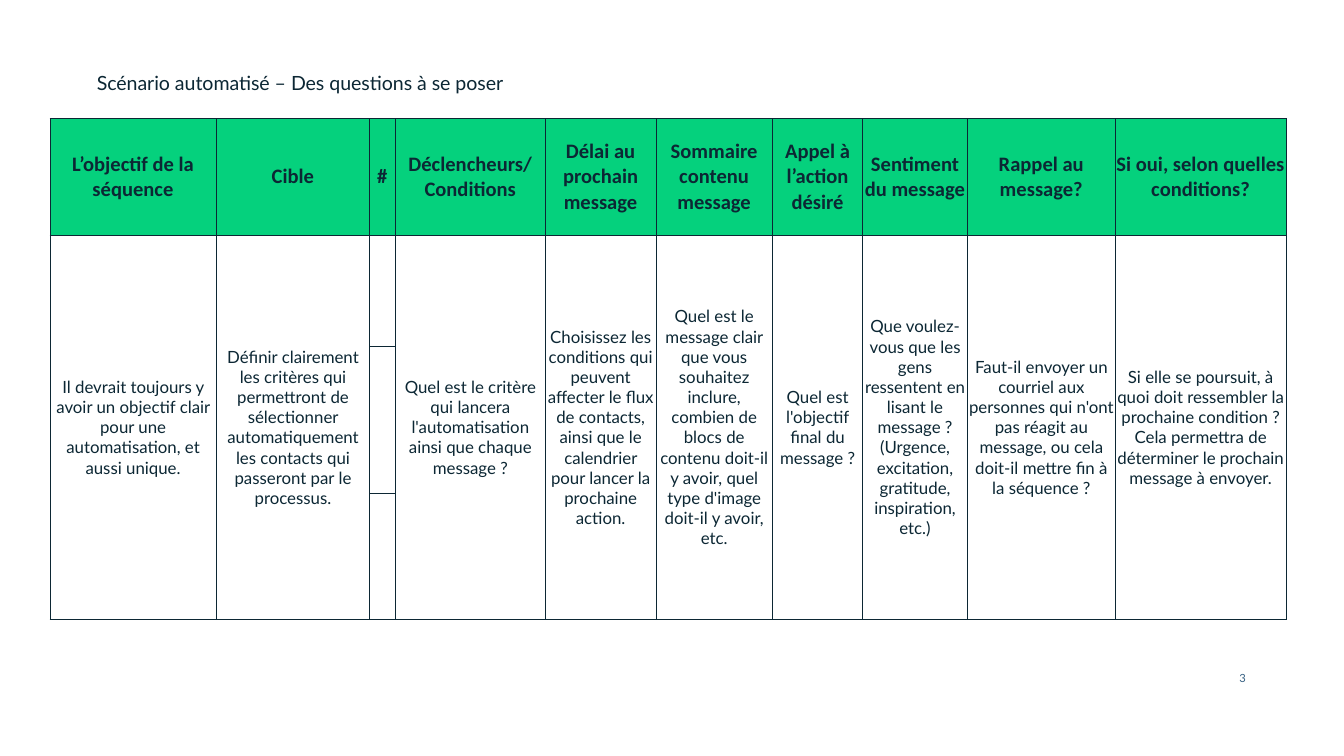
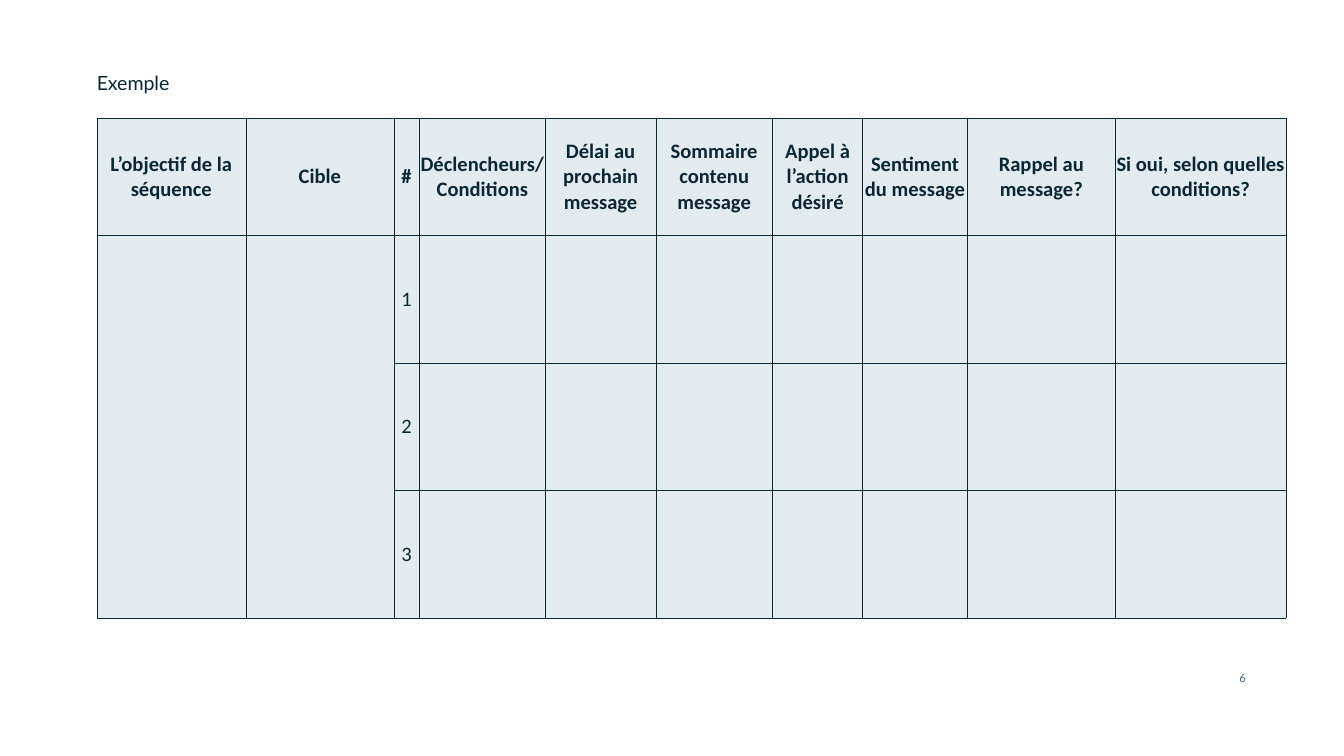
"""Build two slides that plan an automated message scenario in tables."""
from dataclasses import dataclass
from typing import Optional

from lxml.etree import SubElement
from pptx import Presentation
from pptx.dml.color import RGBColor
from pptx.enum.text import MSO_ANCHOR, PP_ALIGN
from pptx.oxml.ns import qn
from pptx.slide import Slide
from pptx.table import _Cell
from pptx.text.text import TextFrame
from pptx.util import Inches, Pt

COLORS = {
    "ink": "0C2734",
    "green": "05D17D",
    "mist": "E4EBEF",
    "number": "376183",
    "paper": "FFFFFF",
}

FORMATS = {
    "title": {"name": "Lato", "size": Pt(10.5), "bold": False},
    "page": {"name": "Lato", "size": Pt(6), "bold": False},
    "header": {"name": "Calibri", "size": Pt(11), "bold": True},
    "answer": {"name": "Lato", "size": Pt(9), "bold": False},
    "step": {"name": "Calibri", "size": Pt(11), "bold": False},
}

NO_MARGINS = {f"margin_{side}": 0 for side in ("left", "top", "right", "bottom")}
BORDER_WIDTH = Pt(0.25)
TABLE_TOP = 0.88
HEADER_HEIGHT = 0.87
SHARED_WIDTHS = (0.82, 0.87, 0.67, 0.78, 1.1, 1.27)

HEADERS = (
    "L’objectif de la séquence",
    "Cible",
    "#",
    "Déclencheurs/\nConditions",
    "Délai au prochain message",
    "Sommaire contenu message",
    "Appel à l’action désiré",
    "Sentiment du message",
    "Rappel au message?",
    "Si oui, selon quelles conditions?",
)
STEP_COLUMN = HEADERS.index("#")

QUESTIONS = (
    "Il devrait toujours y avoir un objectif clair pour une automatisation, et aussi unique.",
    "Définir clairement les critères qui permettront de sélectionner automatiquement "
    "les contacts qui passeront par le processus.",
    "",
    "Quel est le critère qui lancera l'automatisation ainsi que chaque message ?",
    "Choisissez les conditions qui peuvent affecter le flux de contacts, ainsi que le "
    "calendrier pour lancer la prochaine action.",
    "Quel est le message clair que vous souhaitez inclure, combien de blocs de contenu "
    "doit-il y avoir, quel type d'image doit-il y avoir, etc.",
    "Quel est l'objectif final du message ?",
    "Que voulez-vous que les gens ressentent en lisant le message ? (Urgence, "
    "excitation, gratitude, inspiration, etc.)",
    "Faut-il envoyer un courriel aux personnes qui n'ont pas réagit au message, ou cela "
    "doit-il mettre fin à la séquence ?",
    "Si elle se poursuit, à quoi doit ressembler la prochaine condition ? Cela permettra "
    "de déterminer le prochain message à envoyer.",
)


@dataclass(frozen=True)
class Box:
    left: float
    top: float
    width: float
    height: float
    style: str
    color: str
    anchor: MSO_ANCHOR
    align: PP_ALIGN


@dataclass(frozen=True)
class Scenario:
    title: str
    number: int
    left: float
    first_widths: tuple[float, ...]
    step_heights: tuple[float, ...]
    header_fill: str
    body_fill: Optional[str]
    body_style: str
    body_rows: tuple[tuple[str, ...], ...]
    merged_columns: tuple[int, ...]


TITLE_BOX = Box(0.72, 0.18, 3.79, 0.52, "title", "ink", MSO_ANCHOR.BOTTOM, PP_ALIGN.LEFT)
NUMBER_BOX = Box(8.89, 4.98, 0.38, 0.13, "page", "number", MSO_ANCHOR.MIDDLE, PP_ALIGN.RIGHT)

SCENARIOS = (
    Scenario(
        title="Scénario automatisé – Des questions à se poser",
        number=3,
        left=0.37,
        first_widths=(1.24, 1.14, 0.19, 1.12),
        step_heights=(0.83, 1.09, 0.94),
        header_fill="green",
        body_fill=None,
        body_style="answer",
        body_rows=(QUESTIONS,) + (("",) * len(HEADERS),) * 2,
        merged_columns=tuple(i for i in range(len(HEADERS)) if i != STEP_COLUMN),
    ),
    Scenario(
        title="Exemple",
        number=6,
        left=0.72,
        first_widths=(1.11, 1.1, 0.19, 0.94),
        step_heights=(0.95,) * 3,
        header_fill="mist",
        body_fill="mist",
        body_style="step",
        body_rows=tuple(
            tuple(str(step) if i == STEP_COLUMN else "" for i in range(len(HEADERS)))
            for step in (1, 2, 3)
        ),
        merged_columns=(0, 1),
    ),
)


def rgb(color: str) -> RGBColor:
    """Return the named colour."""
    return RGBColor.from_string(COLORS[color])


def write_text(frame: TextFrame, text: str, style: str, color: str, align: PP_ALIGN) -> None:
    """Fill a text frame, one paragraph a line, in a named format."""
    frame.text = text
    for para in frame.paragraphs:
        para.alignment = align
        for span in para.runs:
            span.font.color.rgb = rgb(color)
            for attribute, value in FORMATS[style].items():
                setattr(span.font, attribute, value)


def add_text(page: Slide, box: Box, text: str) -> None:
    """Place a text box without margins."""
    shape = page.shapes.add_textbox(
        Inches(box.left), Inches(box.top), Inches(box.width), Inches(box.height)
    )
    frame = shape.text_frame
    settings = {"word_wrap": True, "vertical_anchor": box.anchor, **NO_MARGINS}
    for attribute, value in settings.items():
        setattr(frame, attribute, value)
    write_text(frame, text, box.style, box.color, box.align)


def format_cell(cell: _Cell, text: str, style: str, fill: Optional[str]) -> None:
    """Write a centred table cell with thin borders and an optional fill."""
    for attribute, value in {"vertical_anchor": MSO_ANCHOR.MIDDLE, **NO_MARGINS}.items():
        setattr(cell, attribute, value)
    write_text(cell.text_frame, text, style, "ink", PP_ALIGN.CENTER)
    properties = cell._tc.get_or_add_tcPr()
    for side in ("lnL", "lnR", "lnT", "lnB"):
        line = SubElement(properties, qn(f"a:{side}"), w=str(BORDER_WIDTH))
        solid = SubElement(line, qn("a:solidFill"))
        SubElement(solid, qn("a:srgbClr"), val=COLORS["ink"])
    if fill is None:
        cell.fill.background()
    else:
        cell.fill.solid()
        cell.fill.fore_color.rgb = rgb(fill)


def add_scenario_table(page: Slide, scenario: Scenario) -> None:
    """Draw the header row and the step rows of a scenario."""
    widths = scenario.first_widths + SHARED_WIDTHS
    heights = (HEADER_HEIGHT,) + scenario.step_heights
    table = page.shapes.add_table(
        len(heights), len(widths), Inches(scenario.left), Inches(TABLE_TOP),
        Inches(sum(widths)), Inches(sum(heights)),
    ).table
    table.first_row = False
    table.horz_banding = False
    for column, width in zip(table.columns, widths):
        column.width = Inches(width)
    for row, height in zip(table.rows, heights):
        row.height = Inches(height)
    for i, texts in enumerate((HEADERS,) + scenario.body_rows):
        style = scenario.body_style if i else "header"
        fill = scenario.body_fill if i else scenario.header_fill
        for j, text in enumerate(texts):
            format_cell(table.cell(i, j), text, style, fill)
    for j in scenario.merged_columns:
        table.cell(1, j).merge(table.cell(len(heights) - 1, j))


def main() -> None:
    """Build and save the deck."""
    deck = Presentation()
    deck.slide_width = Inches(10)
    deck.slide_height = Inches(10) * 9 // 16
    for scenario in SCENARIOS:
        page = deck.slides.add_slide(deck.slide_layouts[6])
        page.background.fill.solid()
        page.background.fill.fore_color.rgb = rgb("paper")
        add_text(page, NUMBER_BOX, str(scenario.number))
        add_text(page, TITLE_BOX, scenario.title)
        add_scenario_table(page, scenario)
    deck.save("out.pptx")


if __name__ == "__main__":
    main()
